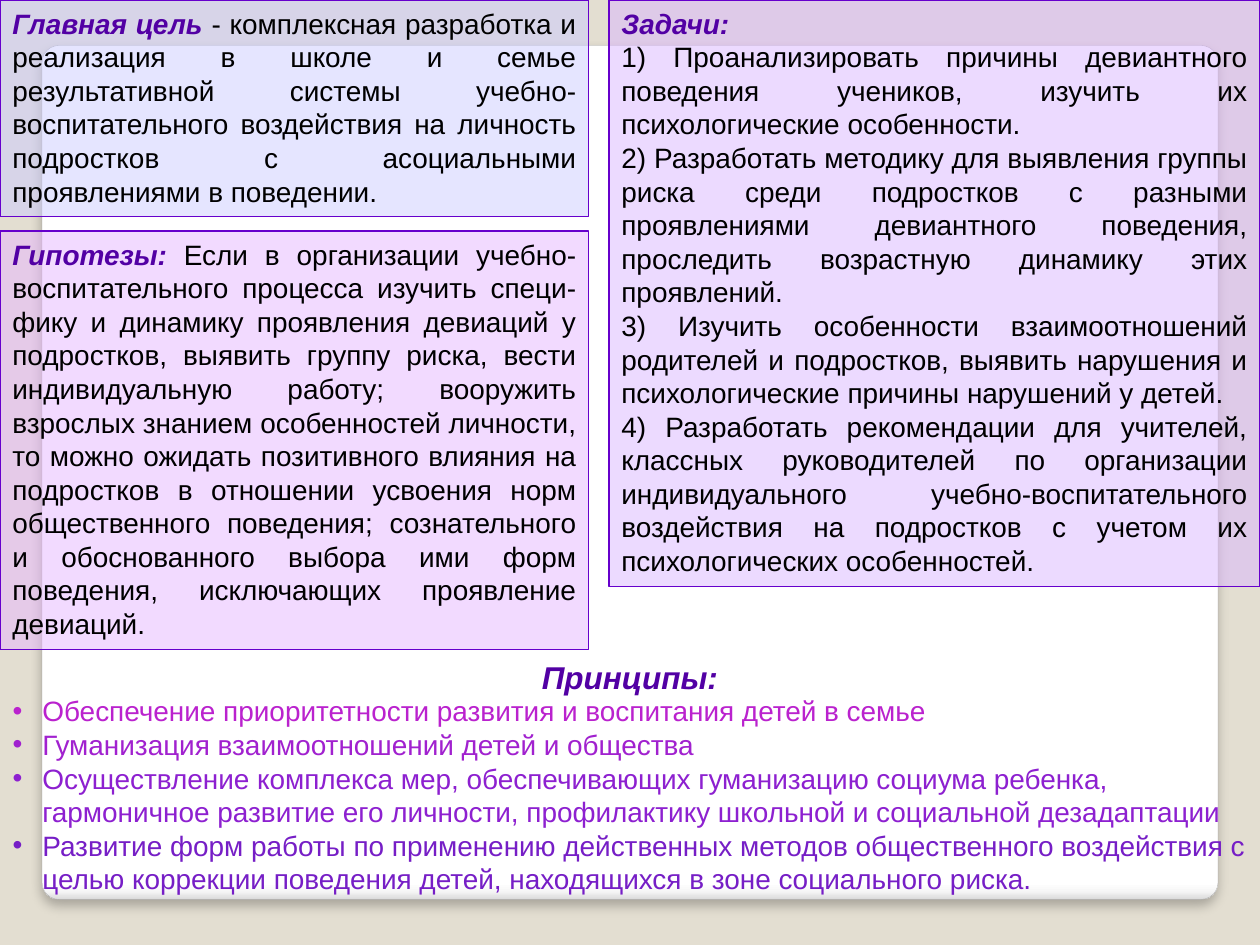
import copy

import lxml.etree
import pptx
import pptx.dml.color
import pptx.enum.shapes
import pptx.enum.text
import pptx.oxml
import pptx.oxml.ns
import pptx.util

Pt = pptx.util.Pt
qn = pptx.oxml.ns.qn
ALIGN = pptx.enum.text.PP_ALIGN
SHAPE = pptx.enum.shapes.MSO_SHAPE
FONT = "Arial"
TEXT_SIZE, TITLE_SIZE = 16, 18
COLORS = {
    "background": "E3DED1", "card": "FFFFFF", "card_line": "A4A4A4",
    "border": "6600CC", "heading": "5200A4", "text": "000000",
    "goal": "CCCCFF", "hypotheses": "E7B7FF", "tasks": "DBB7FF",
}

# fill colour, (left, top, width, height), heading, heading on its own line, paragraphs
PANELS = [
    ("goal", (0, 0, 336.5, 123.6), "Главная цель", False, [
        " - комплексная разработка и реализация в школе и семье результативной "
        "системы учебно-воспитательного воздействия на личность подростков с "
        "асоциальными проявлениями в поведении."]),
    ("tasks", (348, 0, 372, 335.3), "Задачи:", True, [
        "1) Проанализировать причины девиантного поведения учеников, изучить их "
        "психологические особенности.",
        "2) Разработать методику для выявления группы риска среди подростков с "
        "разными проявлениями девиантного поведения, проследить возрастную "
        "динамику этих проявлений.",
        "3) Изучить особенности взаимоотношений родителей и подростков, выявить "
        "нарушения и психологические причины нарушений у детей.",
        "4) Разработать рекомендации для учителей, классных руководителей по "
        "организации индивидуального учебно-воспитательного воздействия на "
        "подростков с учетом их психологических особенностей."]),
    ("hypotheses", (0, 132, 336.5, 239.2), "Гипотезы:", False, [
        " Если в организации учебно-воспитательного процесса изучить специ-фику и "
        "динамику проявления девиаций у подростков, выявить группу риска, вести "
        "индивидуальную работу; вооружить взрослых знанием особенностей личности, "
        "то можно ожидать позитивного влияния на подростков в отношении усвоения "
        "норм общественного поведения; сознательного и обоснованного выбора ими "
        "форм поведения, исключающих проявление девиаций."]),
]
PRINCIPLES_TITLE = "Принципы:"
PRINCIPLES = [
    ("BA22CE", "Обеспечение приоритетности развития и воспитания детей в семье"),
    ("A121CF", "Гуманизация взаимоотношений детей и общества"),
    ("8D20D0", "Осуществление комплекса мер, обеспечивающих гуманизацию социума "
               "ребенка, гармоничное развитие его личности, профилактику школьной "
               "и социальной дезадаптации"),
    ("761EC6", "Развитие форм работы по применению действенных методов общественного "
               "воздействия с целью коррекции поведения детей, находящихся в зоне "
               "социального риска."),
]
TITLE_BOX = (0, 372.2, 720, 24.3)
LIST_BOX = (0, 396.5, 720, 120.4)
CARD_BOX = (24, 26, 672, 488)
CARD_STOPS = [(0, "FFFFFF"), (98, "FFFFFF"), (99, "F7F7F7"), (100, "DADADA")]
BULLET_INDENT = 17


def rgb(value):
    return pptx.dml.color.RGBColor.from_string(value)


def drawing_xml(body):
    namespace = pptx.oxml.ns.nsdecls("a")
    return pptx.oxml.parse_xml(body.replace(">", f" {namespace}>", 1))


def style(span, color, size=TEXT_SIZE, heading=False):
    span.font.name = FONT
    span.font.size = Pt(size)
    span.font.bold = span.font.italic = heading
    span.font.color.rgb = rgb(color)


def place(shape, box):
    shape.left, shape.top, shape.width, shape.height = map(Pt, box)


def prepare_frame(shape, top=3.6, bottom=3.6):
    frame = shape.text_frame
    frame.word_wrap = True
    frame.auto_size = pptx.enum.text.MSO_AUTO_SIZE.NONE
    frame.vertical_anchor = pptx.enum.text.MSO_ANCHOR.TOP
    frame.margin_left = frame.margin_right = Pt(7.2)
    frame.margin_top, frame.margin_bottom = Pt(top), Pt(bottom)
    return frame


def set_spacing(para, align):
    para.alignment = align
    para.line_spacing = 1.0
    para.space_before = para.space_after = Pt(0)


def add_card(slide):
    """Add the rounded sheet with a shaded lower edge behind everything else."""
    card = slide.shapes.add_shape(SHAPE.ROUNDED_RECTANGLE, *map(Pt, CARD_BOX))
    card.adjustments[0] = 0.02
    card.line.color.rgb = rgb(COLORS["card_line"])
    card.line.width = Pt(0.16)
    stops = "".join(f'<a:gs pos="{position * 1000}"><a:srgbClr val="{color}"/></a:gs>'
                    for position, color in CARD_STOPS)
    gradient = drawing_xml(f'<a:gradFill><a:gsLst>{stops}</a:gsLst>'
                           '<a:lin ang="5400000" scaled="0"/></a:gradFill>')
    properties = card._element.spPr
    properties.find(qn("a:prstGeom")).addnext(gradient)
    properties.append(drawing_xml(
        f'<a:effectLst><a:outerShdw blurRad="{Pt(6)}" dist="{Pt(4)}" dir="5400000" '
        'rotWithShape="0"><a:srgbClr val="000000"><a:alpha val="25000"/></a:srgbClr>'
        '</a:outerShdw></a:effectLst>'))
    slide.shapes._spTree.insert(2, card._element)


def add_panel(slide, name, box, heading, own_line, paragraphs):
    panel = slide.shapes.add_shape(SHAPE.RECTANGLE, *map(Pt, box))
    panel.shadow.inherit = False
    panel.fill.solid()
    panel.fill.fore_color.rgb = rgb(COLORS[name])
    color = panel._element.spPr.find(qn("a:solidFill")).find(qn("a:srgbClr"))
    lxml.etree.SubElement(color, qn("a:alpha"), val="50000")
    panel.line.color.rgb = rgb(COLORS["border"])
    panel.line.width = Pt(0.75)
    frame = prepare_frame(panel)
    for index, text in enumerate(paragraphs):
        para = frame.add_paragraph() if index else frame.paragraphs[0]
        set_spacing(para, ALIGN.JUSTIFY)
        if index == 0:
            span = para.add_run()
            span.text = heading
            style(span, COLORS["heading"], heading=True)
            if own_line:
                para.add_line_break()
                para._p[-1].append(copy.deepcopy(span._r.rPr))
        span = para.add_run()
        span.text = text
        style(span, COLORS["text"])


def fill_principles(title, body):
    place(title, TITLE_BOX)
    frame = prepare_frame(title, bottom=0)
    frame.text = PRINCIPLES_TITLE
    set_spacing(frame.paragraphs[0], ALIGN.CENTER)
    style(frame.paragraphs[0].runs[0], COLORS["heading"], TITLE_SIZE, heading=True)

    place(body, LIST_BOX)
    frame = prepare_frame(body, top=0)
    frame.text = "\n".join(text for _, text in PRINCIPLES)
    for para, (color, _) in zip(frame.paragraphs, PRINCIPLES):
        set_spacing(para, ALIGN.LEFT)
        style(para.runs[0], color)
        properties = para._p.get_or_add_pPr()
        properties.set("marL", str(Pt(BULLET_INDENT)))
        properties.set("indent", str(-Pt(BULLET_INDENT)))
        lxml.etree.SubElement(properties, qn("a:buFont"), typeface=FONT)
        lxml.etree.SubElement(properties, qn("a:buChar"), char="•")


def main():
    deck = pptx.Presentation()
    deck.slide_width, deck.slide_height = Pt(720), Pt(540)
    slide = deck.slides.add_slide(deck.slide_layouts[1])
    slide.background.fill.solid()
    slide.background.fill.fore_color.rgb = rgb(COLORS["background"])
    add_card(slide)
    fill_principles(slide.shapes.title, slide.placeholders[1])
    for panel in PANELS:
        add_panel(slide, *panel)
    deck.save("out.pptx")


if __name__ == "__main__":
    main()
